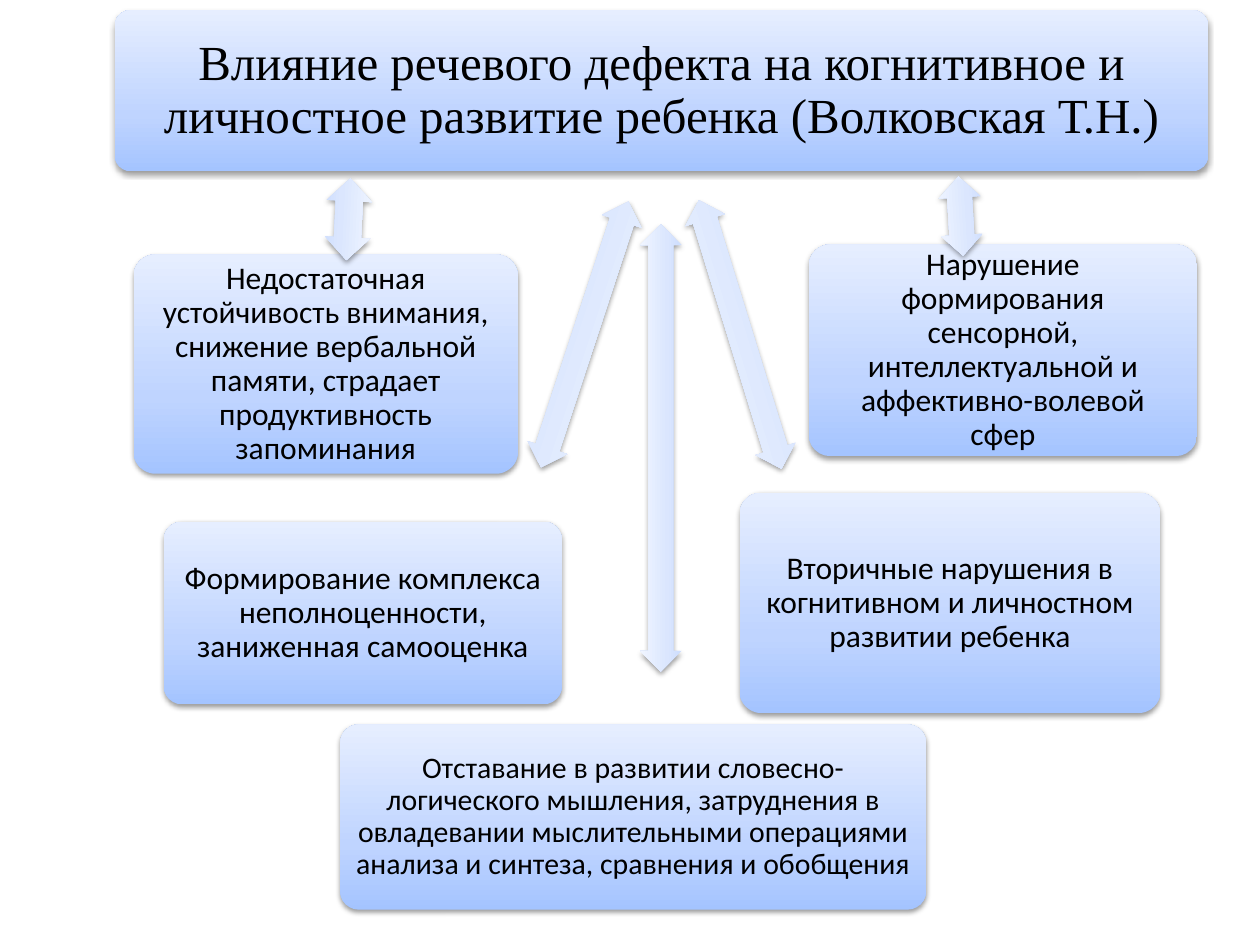
import pptx
import pptx.util
import pptx.dml.color
import pptx.enum.shapes
import pptx.enum.text
import pptx.oxml
import pptx.oxml.ns

THEME = {
    "box": ("A4C4FF", "BFD4FF", "E6EEFF"),
    "arrow": ("CDDDFE", "DBE6FE", "F0F5FF"),
    "ink": "000000",
    "head": (28, "Times New Roman", 1.2),
    "body": (18, "Calibri", 0.8),
    "foot": (17, "Calibri", 0.7),
}
KIND = pptx.enum.shapes.MSO_SHAPE
TEXT = pptx.enum.text

deck = pptx.Presentation()
deck.slide_width = pptx.util.Inches(10)
deck.slide_height = pptx.util.Inches(7.5)
slide = deck.slides.add_slide(deck.slide_layouts[6])
UNIT = deck.slide_width / 100  # grid of 100 columns by 75 rows


def draw(kind, area, tones, ratios):
    """Add a borderless shape with a vertical gradient and a soft shadow."""
    shape = slide.shapes.add_shape(kind, *[round(n * UNIT) for n in area])
    for i, ratio in enumerate(ratios):
        shape.adjustments[i] = ratio
    shape.line.fill.background()
    stops = "".join(
        f'<a:gs pos="{pos}"><a:srgbClr val="{tone}"/></a:gs>'
        for pos, tone in zip((0, 35000, 100000), tones))
    space = pptx.oxml.ns.nsdecls("a")
    fill = pptx.oxml.parse_xml(
        f'<a:gradFill {space} rotWithShape="1"><a:gsLst>{stops}</a:gsLst>'
        '<a:lin ang="16200000" scaled="0"/></a:gradFill>')
    glow = pptx.oxml.parse_xml(
        f'<a:effectLst {space}><a:outerShdw blurRad="39370" dist="20320" '
        'dir="5400000" rotWithShape="0"><a:srgbClr val="000000">'
        '<a:alpha val="38000"/></a:srgbClr></a:outerShdw></a:effectLst>')
    props = shape.element.spPr
    props.insert(2, fill)
    props.append(glow)
    return shape


def write(shape, words, style):
    """Put centred text in a box."""
    size, face, inset = THEME[style]
    frame = shape.text_frame
    gap = round(inset * UNIT)
    look = {"word_wrap": True, "vertical_anchor": TEXT.MSO_ANCHOR.MIDDLE,
            "margin_left": gap, "margin_right": gap,
            "margin_top": gap, "margin_bottom": gap}
    for name, value in look.items():
        setattr(frame, name, value)
    para = frame.paragraphs[0]
    para.alignment = TEXT.PP_ALIGN.CENTER
    para.line_spacing = 0.9
    run = para.add_run()
    run.text = words
    run.font.size = pptx.util.Pt(size)
    run.font.name = face
    run.font.color.rgb = pptx.dml.color.RGBColor.from_string(THEME["ink"])


# Boxes hold a style and words; arrows hold a turn in degrees.
ITEMS = [
    ((9.1, 0.8, 86.8, 12.8), "head",
     "Влияние речевого дефекта на когнитивное и личностное развитие "
     "ребенка (Волковская Т.Н.)"),
    ((35.3, 24.9, 22.2, 3.3), 108.2),
    ((64.2, 19.4, 30.8, 16.8), "body",
     "Нарушение формирования сенсорной, интеллектуальной и "
     "аффективно-волевой сфер"),
    ((47.6, 24.9, 22.3, 3.3), 252.9),
    ((58.7, 39.1, 33.4, 17.5), "body",
     "Вторичные нарушения в когнитивном и личностном развитии ребенка"),
    ((73.1, 15.5, 6.3, 3.3), 266.6),
    ((13, 41.4, 31.6, 14.5), "body",
     "Формирование комплекса неполноценности, заниженная самооценка"),
    ((34.7, 33.9, 35.5, 3.3), 270),
    ((27, 57.5, 46.5, 14.7), "foot",
     "Отставание в развитии словесно-логического мышления, затруднения "
     "в овладевании мыслительными операциями анализа и синтеза, "
     "сравнения и обобщения"),
    ((10.6, 20.2, 30.5, 17.4), "body",
     "Недостаточная устойчивость внимания, снижение вербальной памяти, "
     "страдает продуктивность запоминания"),
    ((24.4, 15.6, 6.5, 3.6), 92.9),
]

for area, mode, *words in ITEMS:
    if words:
        box = draw(KIND.ROUNDED_RECTANGLE, area, THEME["box"], [0.1])
        write(box, words[0], mode)
    else:
        arrow = draw(KIND.LEFT_RIGHT_ARROW, area, THEME["arrow"], [0.6, 0.5])
        arrow.rotation = mode

deck.save("out.pptx")
